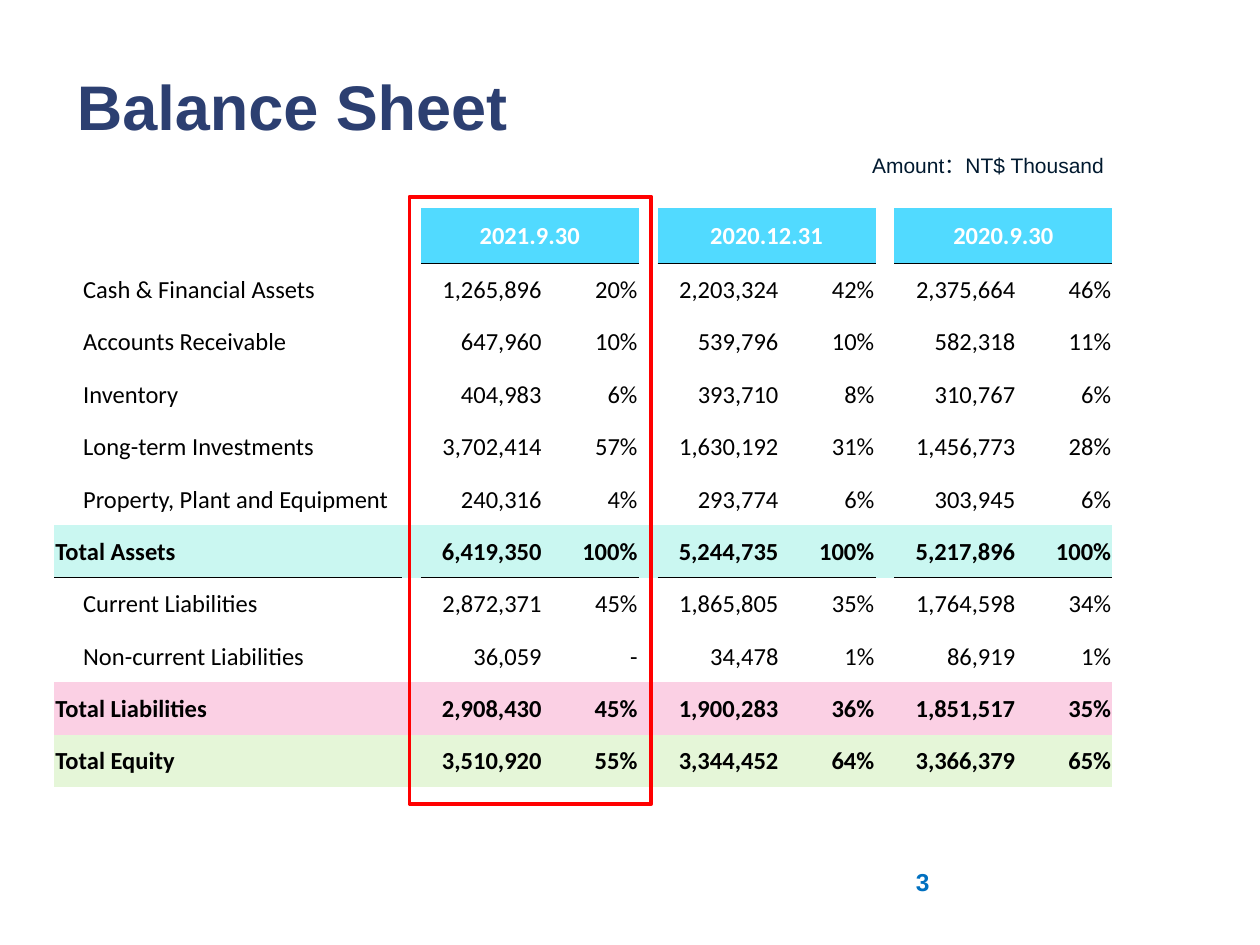
from dataclasses import dataclass

from lxml.etree import SubElement
from pptx import Presentation
from pptx.dml.color import RGBColor as RGB
from pptx.enum.shapes import MSO_SHAPE as Shape
from pptx.enum.text import MSO_ANCHOR as Anchor, PP_ALIGN as Align
from pptx.oxml import parse_xml
from pptx.oxml.ns import nsdecls, qn
from pptx.util import Inches, Pt


@dataclass(frozen=True)
class Theme:
    head: str = "Arial"
    body: str = "Calibri"
    title: int = 36
    cell: int = 14
    note: int = 12
    navy: str = "2C3F71"
    dark: str = "00192F"
    blue: str = "0070C0"
    sky: str = "51DAFF"
    mint: str = "CAF7F1"
    pink: str = "FBD0E4"
    lime: str = "E5F6D8"
    red: str = "FF0000"
    black: str = "000000"
    white: str = "FFFFFF"


T = Theme()
NO_GRID = "{2D5ABB26-0587-4C30-8999-92F81FD0307C}"
DATES = ["2021.9.30", "2020.12.31", "2020.9.30"]
WIDTHS = [2.76] + [0.15, 1.02, 0.71] * len(DATES)
HEAD_H, ROW_H = 0.44, 0.416
FILLS = {"Total Assets": T.mint, "Total Liabilities": T.pink,
         "Total Equity": T.lime}
RULED = "Total Assets"
ROWS = [
    ("Cash & Financial Assets",
     "1,265,896", "20%", "2,203,324", "42%", "2,375,664", "46%"),
    ("Accounts Receivable",
     "647,960", "10%", "539,796", "10%", "582,318", "11%"),
    ("Inventory",
     "404,983", "6%", "393,710", "8%", "310,767", "6%"),
    ("Long-term Investments",
     "3,702,414", "57%", "1,630,192", "31%", "1,456,773", "28%"),
    ("Property, Plant and Equipment",
     "240,316", "4%", "293,774", "6%", "303,945", "6%"),
    ("Total Assets",
     "6,419,350", "100%", "5,244,735", "100%", "5,217,896", "100%"),
    ("Current Liabilities",
     "2,872,371", "45%", "1,865,805", "35%", "1,764,598", "34%"),
    ("Non-current Liabilities",
     "36,059", "-", "34,478", "1%", "86,919", "1%"),
    ("Total Liabilities",
     "2,908,430", "45%", "1,900,283", "36%", "1,851,517", "35%"),
    ("Total Equity",
     "3,510,920", "55%", "3,344,452", "64%", "3,366,379", "65%"),
]


def write(frame, text, size, color, face=T.head, bold=False, align=Align.LEFT):
    frame.text = text
    para = frame.paragraphs[0]
    para.alignment = align
    for run in para.runs:
        font = run.font
        font.name, font.size, font.bold = face, Pt(size), bold
        font.color.rgb = RGB.from_string(color)


def add_title(slide, text):
    title = slide.shapes.title
    title.left, title.top = Inches(0.51), Inches(0.21)
    title.width, title.height = Inches(8.58), Inches(1.25)
    title.text_frame.vertical_anchor = Anchor.MIDDLE
    write(title.text_frame, text, T.title, T.navy, bold=True)


def add_text(slide, box, text, size, color, **style):
    frame = slide.shapes.add_textbox(*map(Inches, box)).text_frame
    frame.word_wrap = True
    write(frame, text, size, color, **style)


def add_frame(slide, box):
    frame = slide.shapes.add_shape(Shape.RECTANGLE, *map(Inches, box))
    frame.shadow.inherit = False
    frame.fill.background()
    frame.line.color.rgb = RGB.from_string(T.red)
    frame.line.width = Pt(2.25)


def rule(cell, width):
    """Draw a black line under a cell."""
    cell._tc.get_or_add_tcPr().insert(0, parse_xml(
        f'<a:lnB {nsdecls("a")} w="{Pt(width)}"><a:solidFill>'
        f'<a:srgbClr val="{T.black}"/></a:solidFill></a:lnB>'))


def paint(cell, fill):
    cell.margin_left = cell.margin_right = cell.margin_top = Inches(0.01)
    cell.margin_bottom = 0
    cell.vertical_anchor = Anchor.MIDDLE
    if fill:
        cell.fill.solid()
        cell.fill.fore_color.rgb = RGB.from_string(fill)
    else:
        cell.fill.background()


def fill_head(table):
    for cell in table.rows[0].cells:
        paint(cell, None)
    for i, date in enumerate(DATES):
        col = 2 + 3 * i
        first, last = table.cell(0, col), table.cell(0, col + 1)
        first.merge(last)
        for cell in (first, last):
            paint(cell, T.sky)
            rule(cell, 1)
        write(first.text_frame, date, T.cell, T.white, T.body, True,
              Align.CENTER)


def fill_row(row, label, *values):
    fill = FILLS.get(label)
    cells = list(row.cells)
    for cell in cells:
        paint(cell, fill)
    used = [cell for i, cell in enumerate(cells) if i == 0 or i % 3 != 1]
    for i, (cell, text) in enumerate(zip(used, (label, *values))):
        write(cell.text_frame, text, T.cell, T.black, T.body, bool(fill),
              Align.RIGHT if i else Align.LEFT)
        if i % 2:
            cell.margin_right = Inches(0.06)
        if label == RULED:
            rule(cell, 0.5)
    if not fill:
        cells[0].margin_left = Inches(0.23)


def add_sheet(slide):
    table = slide.shapes.add_table(
        len(ROWS) + 1, len(WIDTHS), Inches(0.43), Inches(1.65),
        Inches(sum(WIDTHS)), Inches(HEAD_H + ROW_H * len(ROWS))).table
    table.first_row = table.horz_banding = False
    props = table._tbl.tblPr
    style = props.find(qn("a:tableStyleId"))
    if style is None:
        style = SubElement(props, qn("a:tableStyleId"))
    style.text = NO_GRID
    for col, width in zip(table.columns, WIDTHS):
        col.width = Inches(width)
    for i, row in enumerate(table.rows):
        row.height = Inches(ROW_H if i else HEAD_H)
    fill_head(table)
    for i, data in enumerate(ROWS, 1):
        fill_row(table.rows[i], *data)


def main():
    deck = Presentation()
    deck.slide_width, deck.slide_height = Inches(10), Inches(7.5)
    slide = deck.slides.add_slide(deck.slide_layouts[5])
    add_sheet(slide)
    add_text(slide, (7.17, 6.83, 2.33, 0.52), "3", T.cell, T.blue, bold=True)
    add_title(slide, "Balance Sheet")
    add_frame(slide, (3.25, 1.56, 1.92, 4.82))
    add_text(slide, (6.57, 1.16, 2.29, 0.3), "Amount：NT$ Thousand",
             T.note, T.dark, align=Align.RIGHT)
    deck.save("out.pptx")


if __name__ == "__main__":
    main()
